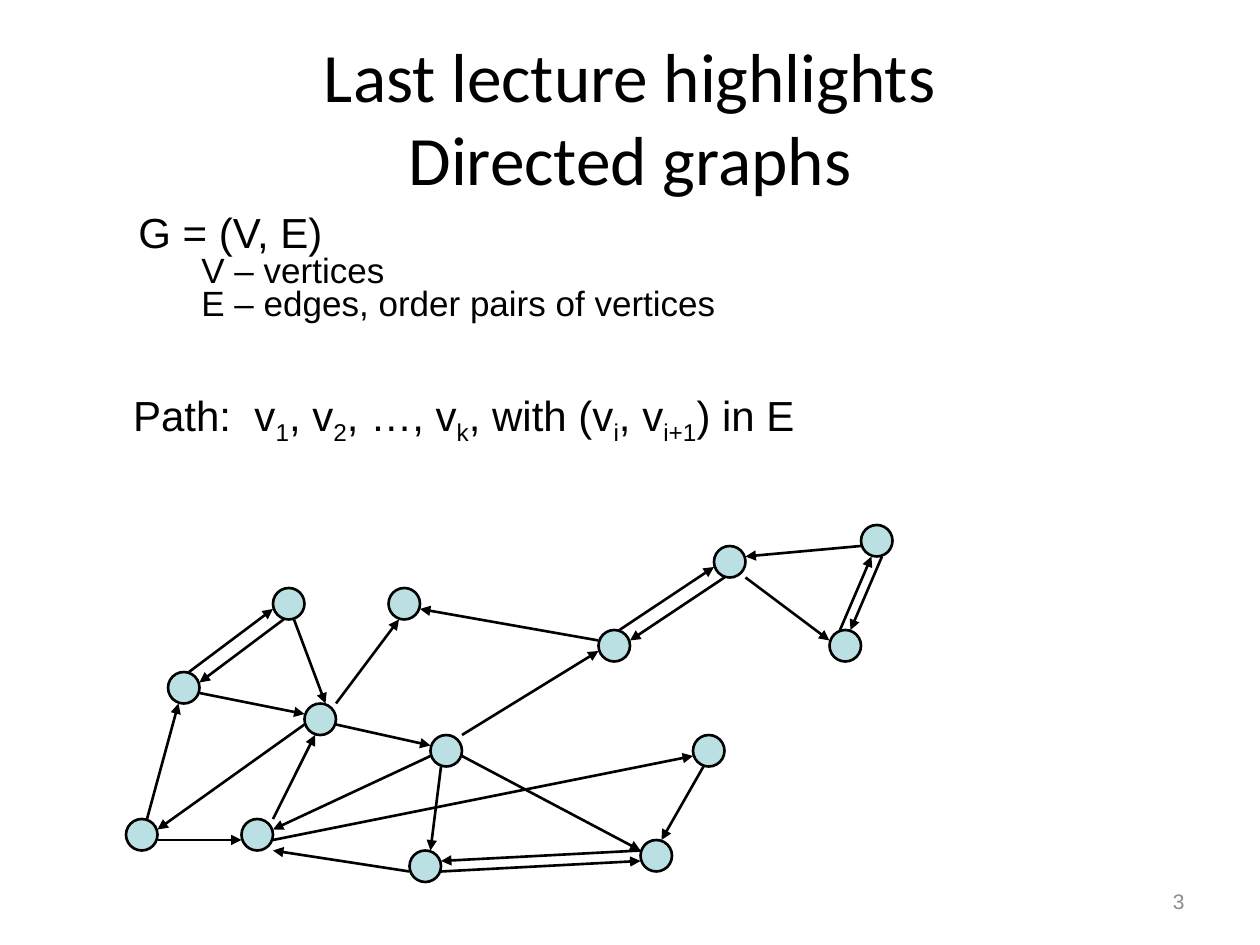
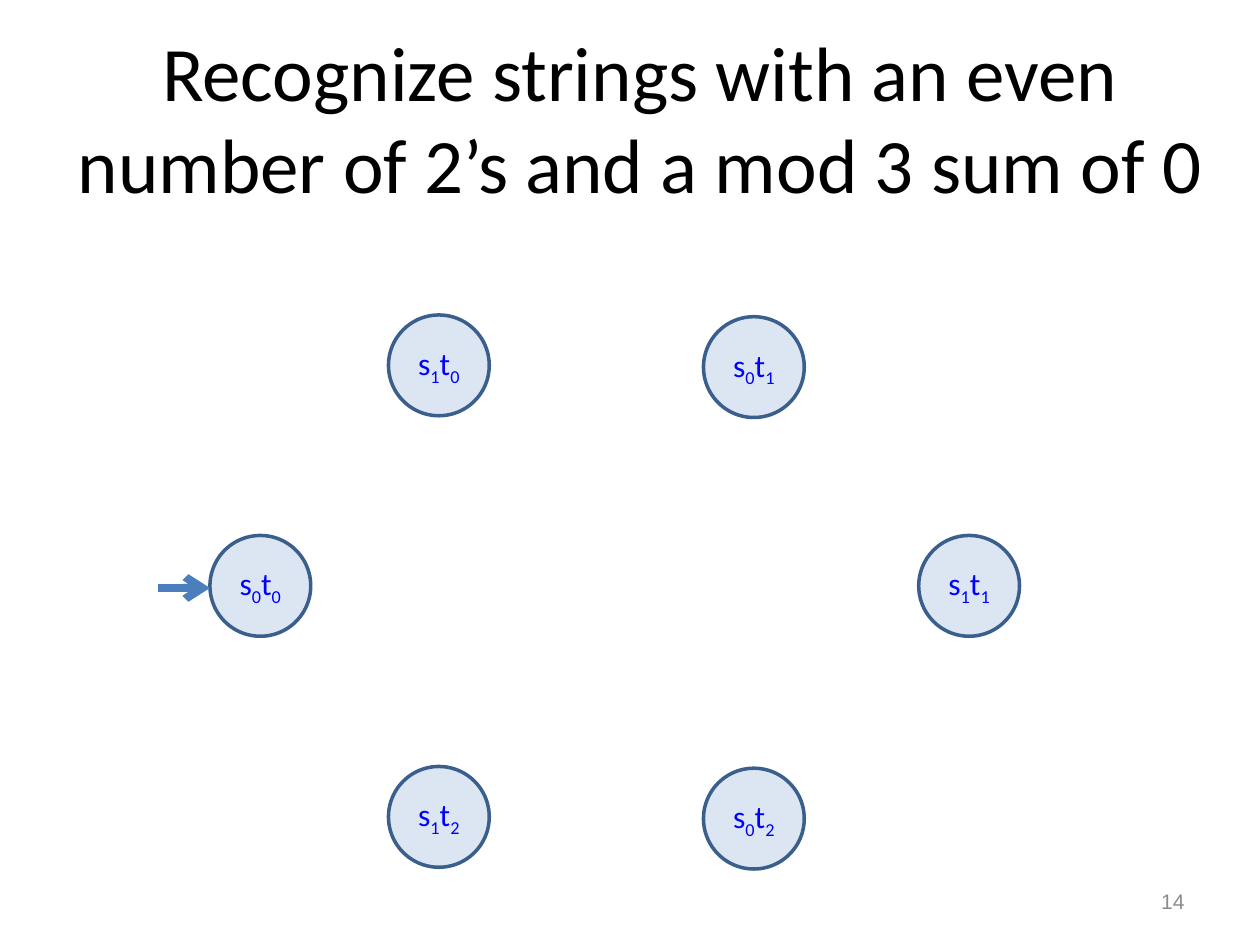
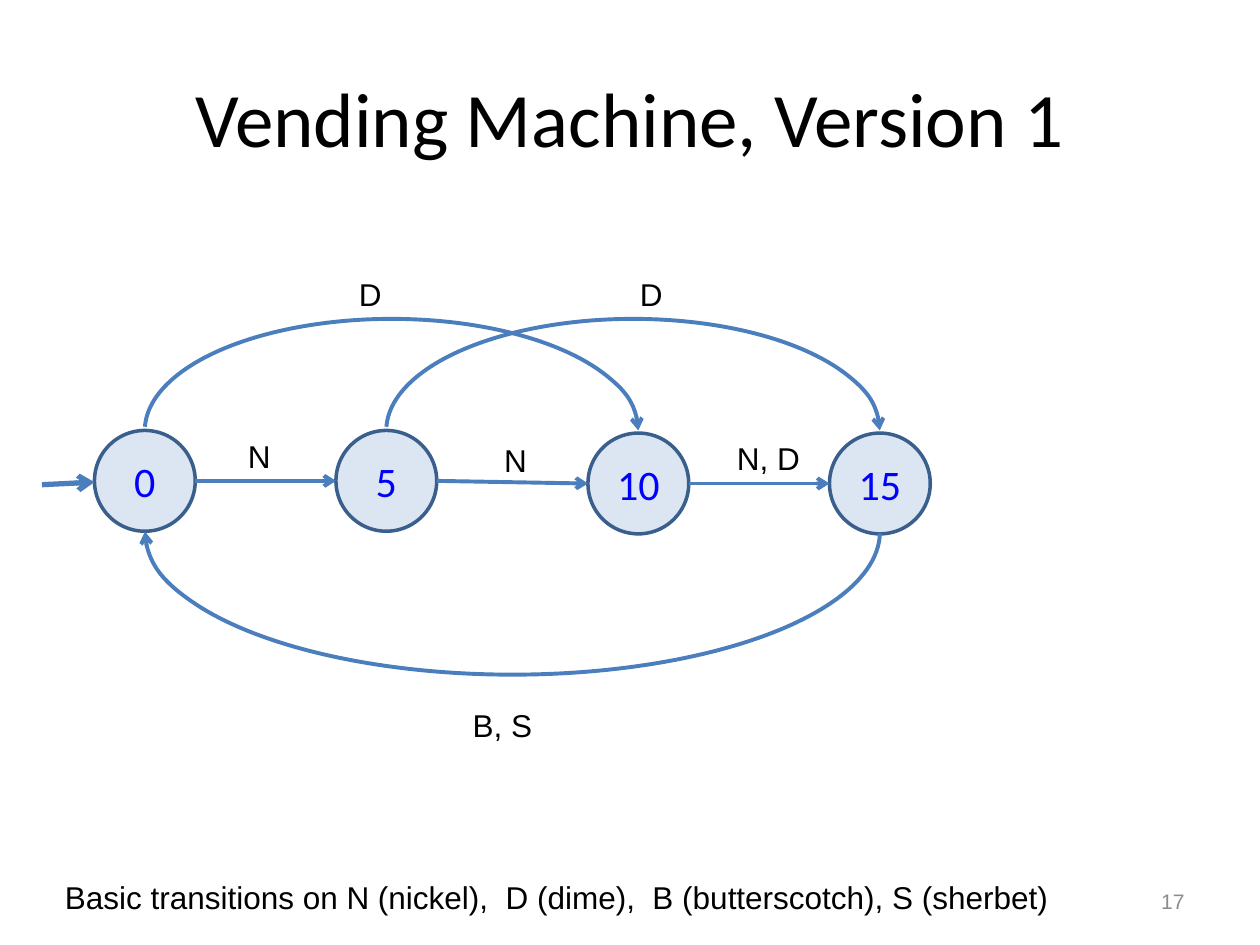
from lxml import etree
from pptx import Presentation
from pptx.dml.color import RGBColor
from pptx.enum import shapes, text
from pptx.oxml import ns
from pptx.util import Pt

BLACK, GREY, BLUE = "000000", "8C8C8C", "0000FF"
NODE_FILL, STATE_FILL, STATE_LINE, ARROW = "BBE0E3", "DCE6F2", "3A5F8C", "4B7EBC"
STATE_SIZE = 57.6
GRID = 6  # points per unit of the directed graph
GRAPH_NODE = 3  # node diameter in grid units

GRAPH_NODES = [
    (4, 14), (29, 20), (0, 28), (45, 10), (17, 17), (11, 28), (27, 31),
    (25, 6), (56, 2), (54, 20), (14, 6), (49, 30), (70, 0), (67, 10),
]
GRAPH_EDGES = [
    (17, 19, 3, 29), (14, 28, 18, 20), (3, 30, 11, 30), (2, 28, 5, 17),
    (6, 14, 14, 8), (7, 16, 17, 18), (16, 9, 19, 17), (20, 17, 26, 9),
    (20, 19, 29, 21), (29, 22, 14, 29), (14, 30, 54, 22), (27, 33, 14, 31),
    (30, 23, 29, 31), (49, 31, 30, 32), (55, 23, 51, 30), (32, 22, 49, 31),
    (32, 20, 45, 12), (45, 11, 28, 8), (57, 5, 48, 11), (59, 5, 67, 11),
    (70, 2, 59, 3), (72, 3, 69, 10), (47, 10, 56, 4), (68, 10, 71, 3),
    (30, 33, 49, 32), (15, 9, 7, 15),
]


def color(value):
    return RGBColor.from_string(value)


def style_font(font, size, name="Arial", value=BLACK):
    font.size, font.name = Pt(size), name
    font.color.rgb = color(value)


def style_line(line, value, width):
    line.color.rgb = color(value)
    line.width = Pt(width)


def add_arrowhead(shape, kind):
    line = shape._element.spPr.find(ns.qn("a:ln"))
    etree.SubElement(line, ns.qn("a:tailEnd"), type=kind)


def write_spans(para, content):
    """Write text in which every second part between bars is a subscript."""
    for index, part in enumerate(content.split("|")):
        if part:
            span = para.add_run()
            span.text = part
            if index % 2:
                span._r.get_or_add_rPr().set("baseline", "-25000")


def add_text(page, box, content, size, value=BLACK, wrap=True):
    """Add a text box and return its frame, for further settings."""
    frame = page.shapes.add_textbox(*map(Pt, box)).text_frame
    frame.word_wrap = wrap
    frame.auto_size = text.MSO_AUTO_SIZE.SHAPE_TO_FIT_TEXT
    write_spans(frame.paragraphs[0], content)
    style_font(frame.paragraphs[0].font, size, value=value)
    return frame


def add_arrow(page, start, end, value=ARROW, width=2.25, head="arrow"):
    arrow = page.shapes.add_connector(
        shapes.MSO_CONNECTOR.STRAIGHT, *map(Pt, (*start, *end)))
    style_line(arrow.line, value, width)
    add_arrowhead(arrow, head)
    etree.SubElement(arrow._element.spPr, ns.qn("a:effectLst"))


def add_circle(page, left, top, size, fill, line, width):
    circle = page.shapes.add_shape(
        shapes.MSO_SHAPE.OVAL, *map(Pt, (left, top, size, size)))
    circle.shadow.inherit = False
    circle.fill.solid()
    circle.fill.fore_color.rgb = color(fill)
    style_line(circle.line, line, width)
    return circle


def add_state(page, left, top, label, size):
    """Add one state of an automaton with its label."""
    state = add_circle(page, left, top, STATE_SIZE, STATE_FILL, STATE_LINE, 2)
    frame = state.text_frame
    frame.word_wrap = False
    frame.vertical_anchor = text.MSO_ANCHOR.MIDDLE
    para = frame.paragraphs[0]
    para.alignment = text.PP_ALIGN.CENTER
    write_spans(para, label)
    style_font(para.font, size, "Calibri", BLUE)


def add_arc(page, box, start, rotation=0):
    arc = page.shapes.add_shape(shapes.MSO_SHAPE.ARC, *map(Pt, box))
    arc.shadow.inherit = False
    arc.fill.background()
    arc.adjustments[0], arc.adjustments[1] = start, 0
    arc.rotation = rotation
    style_line(arc.line, ARROW, 2.25)
    add_arrowhead(arc, "arrow")


def add_page(deck, title, number, title_size=44, title_width=648):
    page = deck.slides.add_slide(deck.slide_layouts[5])
    holder = page.shapes.title
    holder.left, holder.top, holder.width, holder.height = map(
        Pt, (36, 21.6, title_width, 90))
    frame = holder.text_frame
    frame.text = title
    frame.word_wrap = True
    frame.auto_size = text.MSO_AUTO_SIZE.NONE
    frame.vertical_anchor = text.MSO_ANCHOR.MIDDLE
    frame.paragraphs[0].alignment = text.PP_ALIGN.CENTER
    style_font(frame.paragraphs[0].font, title_size, "Calibri")

    footer = add_text(page, (516, 500.4, 168, 28.8), number, 12, GREY)
    footer.auto_size = text.MSO_AUTO_SIZE.NONE
    footer.vertical_anchor = text.MSO_ANCHOR.MIDDLE
    footer.paragraphs[0].alignment = text.PP_ALIGN.RIGHT
    return page


def add_definitions(page, left, top):
    frame = add_text(page, (left, top, 480, 69), "G = (V, E)", 24)
    for line in ("V – vertices", "E – edges, order pairs of vertices"):
        para = frame.add_paragraph()
        para.text = line
        para.level = 1
        para._p.get_or_add_pPr().set("marL", str(Pt(36)))
        style_font(para.font, 20)
    rule = add_text(page, (left - 3, top + 101.8, 492, 30),
                    "Path:  v|1|, v|2|, …, v|k|, with (v|i|, v|i+1|) in E", 24)
    for para in (*frame.paragraphs, *rule.paragraphs):
        para.line_spacing = 0.8


def add_directed_graph(page, left, top):
    def place(column, row):
        return left + column * GRID, top + row * GRID

    for node in GRAPH_NODES:
        add_circle(page, *place(*node), GRAPH_NODE * GRID, NODE_FILL, BLACK, 1.5)
    for edge in GRAPH_EDGES:
        add_arrow(page, place(*edge[:2]), place(*edge[2:]), BLACK, 1.5, "triangle")


def add_ring_of_states(page, left, top):
    states = [
        (0, 126, "s|0|t|0"), (102, 0, "s|1|t|0"), (102, 258, "s|1|t|2"),
        (282, 1, "s|0|t|1"), (282, 259, "s|0|t|2"), (405, 126, "s|1|t|1"),
    ]
    for x, y, label in states:
        add_state(page, left + x, top + y, label, 18)
    add_arrow(page, (left - 30, top + 156), (left, top + 156), width=4.5)


def add_vending_machine(page, left, top):
    radius = STATE_SIZE / 2
    states = [(0, 0, "0"), (138, 0, "5"), (282, 1.5, "10"), (420, 1.5, "15")]
    for x, y, label in states:
        add_state(page, left + x, top + y, label, 24)
    for (x1, y1, _), (x2, y2, _) in zip(states, states[1:]):
        add_arrow(page, (left + x1 + STATE_SIZE, top + y1 + radius),
                  (left + x2, top + y2 + radius))
    add_arrow(page, (left - 30, top + 31), (left, top + 29.5), width=3)

    for x in (0, 138):
        add_arc(page, (left + x + radius, top - 63.75, 282, 127.5), 108.51)
    add_arc(page, (left + radius, top - 24, 420, 163.5), 108.17, 180)

    labels = [
        (144, -92.5, 27, "D"), (304.5, -92.5, 27, "D"), (80.5, 0, 27, "N"),
        (227, 2.5, 27, "N"), (360, 1.5, 51, "N, D"), (209, 154, 49, "B, S"),
    ]
    for x, y, width, label in labels:
        add_text(page, (left + x, top + y, width, 29), label, 18, wrap=False)


def main():
    deck = Presentation()
    deck.slide_width, deck.slide_height = Pt(720), Pt(540)

    page = add_page(deck, "Last lecture highlights\vDirected graphs", "3", 39.6)
    add_definitions(page, 72, 120)
    add_directed_graph(page, 72, 300)

    page = add_page(
        deck, "Recognize strings with an even number of 2’s and a mod 3 sum of 0",
        "14", title_width=660)
    add_ring_of_states(page, 120, 180)

    page = add_page(deck, "Vending Machine, Version 1", "17")
    add_vending_machine(page, 54, 246)
    add_text(page, (30, 498, 581, 29),
             "Basic transitions on N (nickel),  D (dime),  B (butterscotch), S (sherbet)",
             18, wrap=False)

    deck.save("out.pptx")


if __name__ == "__main__":
    main()
